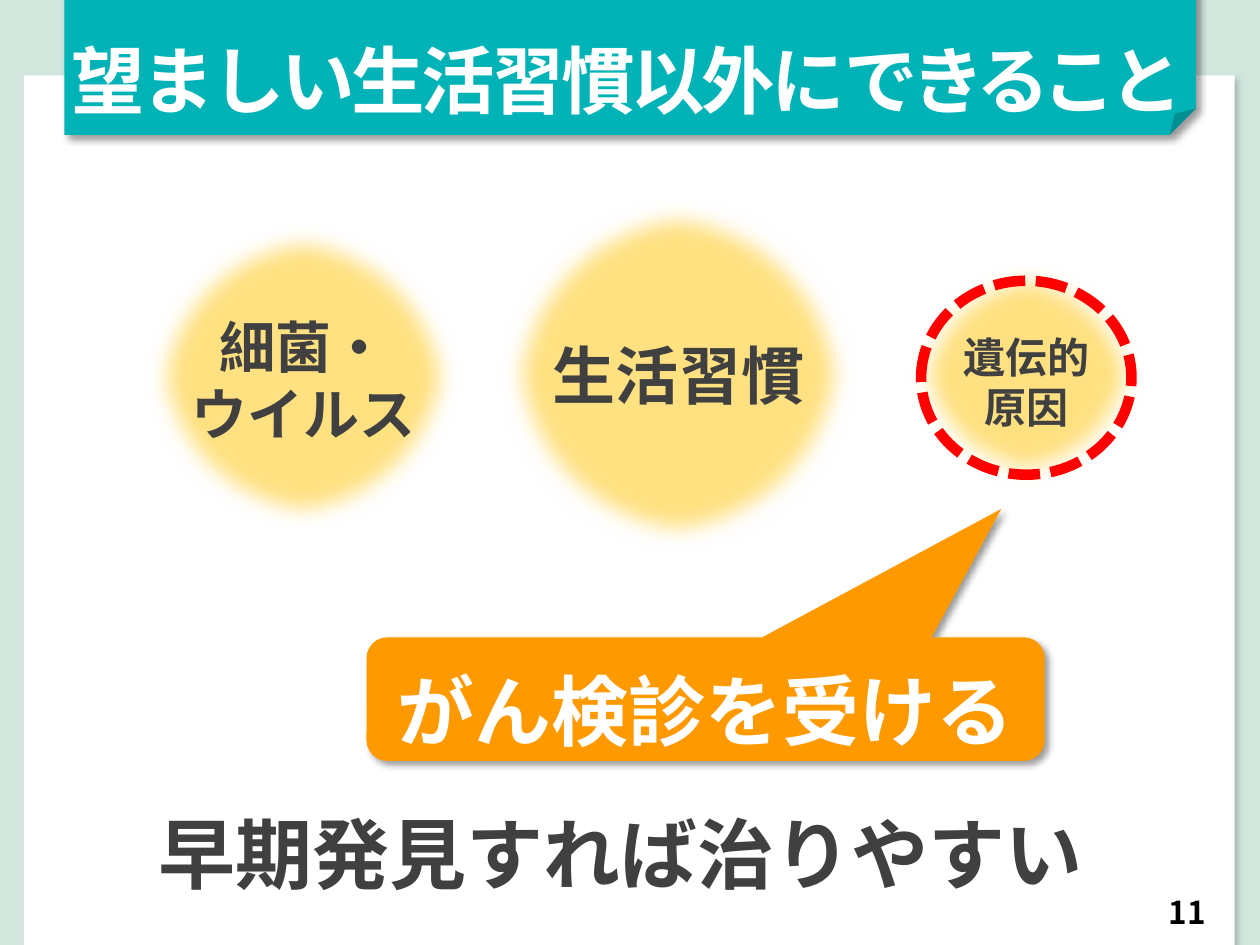
import pptx
import pptx.util
import pptx.dml.color
import pptx.enum.dml
import pptx.enum.shapes
import pptx.enum.text
import pptx.oxml
import pptx.oxml.ns

Cm = pptx.util.Cm
Pt = pptx.util.Pt
KIND = pptx.enum.shapes.MSO_SHAPE
ANCHOR = pptx.enum.text.MSO_ANCHOR
NOTO = "Noto Sans CJK JP"
DARK = "404040"


def color(code):
    """Turn a hex string into a colour."""
    return pptx.dml.color.RGBColor.from_string(code)


def effect(shape, body):
    """Give a shape one effect, written as XML."""
    shape.shadow.inherit = False
    space = pptx.oxml.ns.nsdecls("a")
    node = pptx.oxml.parse_xml(f"<a:effectLst {space}>{body}</a:effectLst>")
    old = shape._element.spPr.find(pptx.oxml.ns.qn("a:effectLst"))
    old.getparent().replace(old, node)


def shade(shape, alpha, blur, dist):
    """Cast a black shadow down and to the right."""
    effect(shape, f'<a:outerShdw blurRad="{Pt(blur)}" dist="{Pt(dist)}" dir="2700000" '
                  f'algn="tl" rotWithShape="0"><a:srgbClr val="000000">'
                  f'<a:alpha val="{alpha * 1000}"/></a:srgbClr></a:outerShdw>')


def block(parts, kind, box, fill=None):
    """Add a preset shape without outline or shadow."""
    shape = parts.add_shape(kind, *map(Cm, box))
    shape.shadow.inherit = False
    shape.line.fill.background()
    if fill:
        shape.fill.solid()
        shape.fill.fore_color.rgb = color(fill)
    else:
        shape.fill.background()
    return shape


def write(shape, lines, size, tint, face=NOTO, anchor=ANCHOR.TOP):
    """Fill a shape with bold centred lines, each a list of (text, spacing)."""
    frame = shape.text_frame
    frame.word_wrap = True
    frame.vertical_anchor = anchor
    for index, line in enumerate(lines):
        para = frame.add_paragraph() if index else frame.paragraphs[0]
        para.alignment = pptx.enum.text.PP_ALIGN.CENTER
        font = para.font
        font.size, font.bold, font.name = Pt(size), True, face
        font.color.rgb = color(tint)
        for text, gap in line:
            run = para.add_run()
            run.text = text
            props = run._r.get_or_add_rPr()
            if gap:
                props.set("spc", str(gap * 100))
            east = pptx.oxml.ns.nsdecls("a")
            props.append(pptx.oxml.parse_xml(f'<a:ea {east} typeface="{face}"/>'))


def label(parts, box, lines, size, tint, face=NOTO, anchor=ANCHOR.TOP):
    """Add a text box."""
    shape = parts.add_textbox(*map(Cm, box))
    write(shape, lines, size, tint, face, anchor)


def frame(parts, box):
    """Draw the green ground and the white sheet."""
    left, top, wide, high = box
    block(parts, KIND.RECTANGLE, box, "D2E6DE")
    sheet = (left + 0.48, top + 1.52, wide - 0.99, high - 1.09)
    shade(block(parts, KIND.RECTANGLE, sheet, "FFFFFF"), 18, 3, 4)


def banner(parts, box):
    """Draw the title on its folded band."""
    left, top, wide, high = box
    shade(block(parts, KIND.FOLDED_CORNER, box, "01B3B7"), 40, 4, 3)
    title = [[("望ましい生活習慣以外に", -2), ("できること", -4)]]
    label(parts, (left - 0.79, top + 1.06, wide + 1.45, 2.06), title, 42, "FFFFFF")


def cause(parts, box, words, size, tall, drop):
    """Draw a soft circle with its words in the middle."""
    left, top, wide, high = box
    group = parts.add_group_shape().shapes
    disc = block(group, KIND.OVAL, box, "FFE181")
    effect(disc, f'<a:softEdge rad="{Pt(12.5)}"/>')
    area = (left + 0.45, top + (high - tall) / 2 + drop, wide - 0.9, tall)
    label(group, area, [[(word, 0)] for word in words], size, DARK, "Calibri")


def ring(parts, box):
    """Draw the dashed red ring."""
    shape = block(parts, KIND.OVAL, box)
    shape.line.color.rgb = color("FF0000")
    shape.line.width = Pt(6)
    shape.line.dash_style = pptx.enum.dml.MSO_LINE.SQUARE_DOT


def advice(parts, box):
    """Draw the orange callout."""
    shape = block(parts, KIND.ROUNDED_RECTANGULAR_CALLOUT, box, "FF9900")
    for index, value in enumerate((0.436, -1.54, 0.167)):
        shape.adjustments[index] = value
    shade(shape, 40, 4, 3)
    shape.text_frame.margin_top = Cm(0.41)
    write(shape, [[("がん検診を受ける", 0)]], 44, "FFFFFF")


def main():
    """Build the slide and save it."""
    deck = pptx.Presentation()
    deck.slide_width, deck.slide_height = Cm(25.4), Cm(19.05)
    parts = deck.slides.add_slide(deck.slide_layouts[6]).shapes
    frame(parts, (0, 0, 25.4, 19.05))
    banner(parts, (1.3, -0.48, 22.81, 3.2))
    cause(parts, (2.9, 4.47, 6.43, 6.25), ["細菌・", "ウイルス"], 32, 2.57, -0.14)
    cause(parts, (10.08, 3.99, 7.19, 7.11), ["生活習慣"], 36, 1.93, 0.07)
    cause(parts, (18.26, 5.21, 4.88, 4.67), ["遺伝的", "原因"], 24, 2.31, 0.16)
    ring(parts, (18.57, 5.66, 4.24, 3.91))
    advice(parts, (7.39, 12.85, 13.67, 2.49))
    label(parts, (0.84, 16.13, 23.37, 2.13), [[("早期発見すれば治りやすい", 0)]], 44, DARK)
    label(parts, (23.04, 17.83, 1.78, 1.12), [[("11", 0)]], 18, "000000", anchor=ANCHOR.MIDDLE)
    deck.save("out.pptx")


if __name__ == "__main__":
    main()
